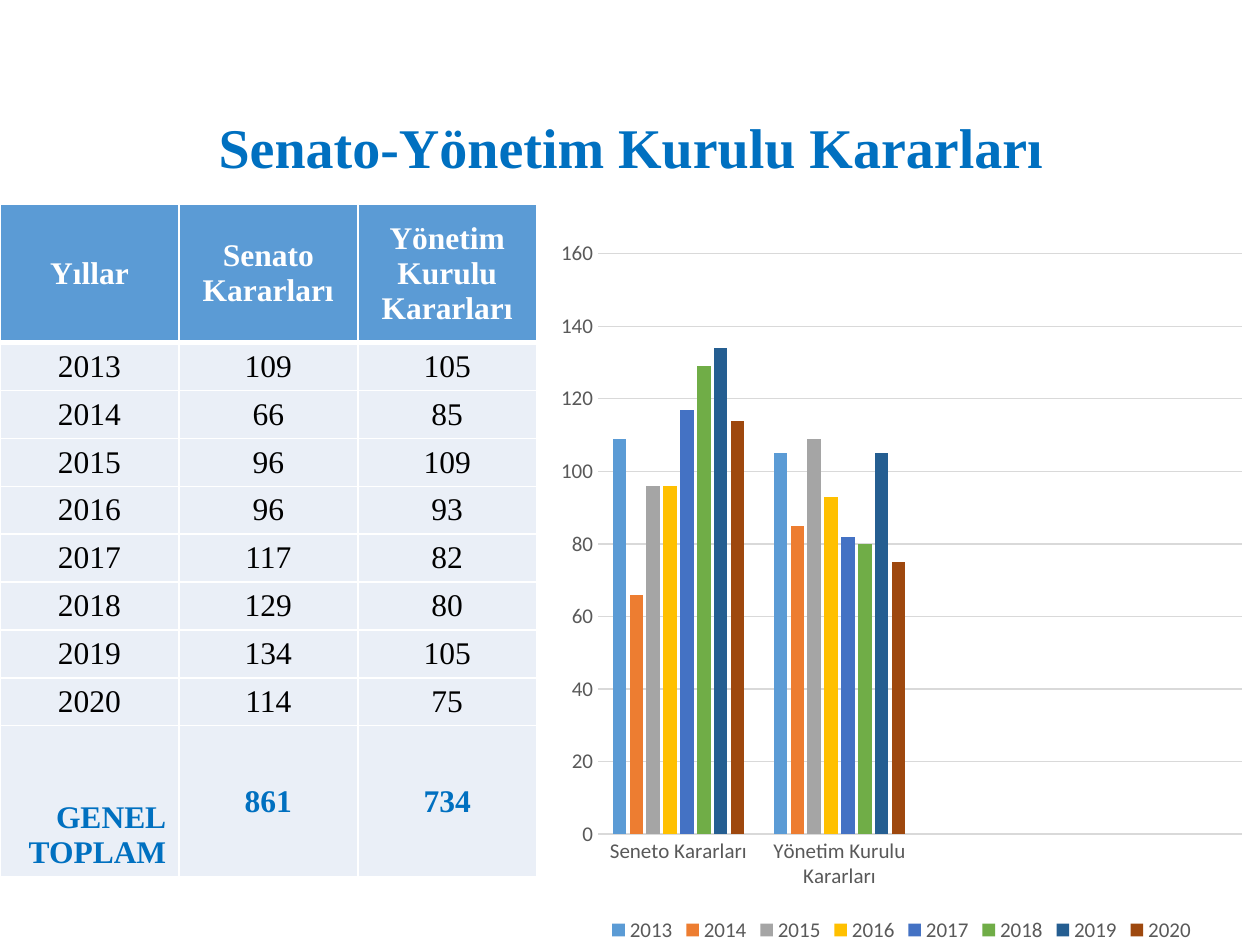
from lxml.etree import SubElement as Sub
from pptx import Presentation as Deck
from pptx.chart.data import CategoryChartData as Data
from pptx.dml.color import RGBColor as Rgb
from pptx.enum.chart import XL_CHART_TYPE as Kind, XL_LEGEND_POSITION as Spot, XL_TICK_MARK as Tick
from pptx.enum.text import MSO_ANCHOR as Anchor, MSO_AUTO_SIZE as Auto, PP_ALIGN as Align
from pptx.oxml.ns import qn
from pptx.util import Inches, Pt

TITLE = "Senato-Yönetim Kurulu Kararları"
HEAD = ("Yıllar", "Senato Kararları", "Yönetim Kurulu Kararları")
YEARS = [
    ("2013", 109, 105, "5B9BD5"),
    ("2014", 66, 85, "ED7D31"),
    ("2015", 96, 109, "A5A5A5"),
    ("2016", 96, 93, "FFC000"),
    ("2017", 117, 82, "4472C4"),
    ("2018", 129, 80, "70AD47"),
    ("2019", 134, 105, "255E91"),
    ("2020", 114, 75, "9E480E"),
]
TOTAL = ("GENEL\nTOPLAM", 861, 734)
GROUPS = ("Seneto Kararları", "Yönetim Kurulu Kararları", "", "")
SERIF, SANS = "Times New Roman", "Calibri"
BLUE, WHITE, BLACK, GREY, RULE = "0070C0", "FFFFFF", "000000", "595959", "D9D9D9"
HEADER, BODY = "5B9BD5", "EAEFF7"
COL, TALL, ROW, LAST = 1.42, 1.1, 0.38, 1.2


def paint(part, hue):
    part.fill.solid()
    part.fill.fore_color.rgb = Rgb.from_string(hue)


def style(font, size, hue, name, bold=False):
    for key, val in {"size": Pt(size), "name": name, "bold": bold}.items():
        setattr(font, key, val)
    font.color.rgb = Rgb.from_string(hue)


def rule(line, hue):
    line.color.rgb = Rgb.from_string(hue)
    line.width = Pt(0.75)


def write(frame, text, size, hue, bold, align):
    frame.text = text
    for par in frame.paragraphs:
        par.alignment = align
        for run in par.runs:
            style(run.font, size, hue, SERIF, bold)


def edge(cell, widths):
    props = cell._tc.get_or_add_tcPr()
    for spot, (side, width) in enumerate(zip("LRTB", widths)):
        line = Sub(props, qn(f"a:ln{side}"), w=str(Pt(width)))
        Sub(Sub(line, qn("a:solidFill")), qn("a:srgbClr"), val=WHITE)
        props.insert(spot, line)


def add_title(slide):
    title = slide.shapes.title
    place = {"left": 0.51, "top": 0.84, "width": 9, "height": 0.71}
    for key, val in place.items():
        setattr(title, key, Inches(val))
    frame = title.text_frame
    frame.auto_size = Auto.NONE
    frame.vertical_anchor = Anchor.MIDDLE
    write(frame, TITLE, 32, BLUE, True, Align.CENTER)
    frame.paragraphs[0].line_spacing = 0.9


def add_grid(slide):
    rows = [HEAD, *(year[:3] for year in YEARS), TOTAL]
    highs = [TALL] + [ROW] * len(YEARS) + [LAST]
    grid = slide.shapes.add_table(
        len(rows), len(HEAD), 0, Inches(1.62),
        Inches(COL * len(HEAD)), Inches(sum(highs))).table
    for col in grid.columns:
        col.width = Inches(COL)
    end = len(rows) - 1
    for r, (row, high) in enumerate(zip(rows, highs)):
        grid.rows[r].height = Inches(high)
        hue = {0: WHITE, end: BLUE}.get(r, BLACK)
        for c, val in enumerate(row):
            cell = grid.cell(r, c)
            label = r == end and c == 0
            align = Align.RIGHT if label else Align.CENTER
            write(cell.text_frame, str(val), 18, hue, r in (0, end), align)
            cell.vertical_anchor = Anchor.BOTTOM if label else Anchor.MIDDLE
            paint(cell, BODY if r else HEADER)
            edge(cell, (1, 1, 3 if r == 1 else 1, 1 if r else 3))


def add_bars(slide):
    data = Data()
    data.categories = GROUPS
    for name, senate, board, hue in YEARS:
        data.add_series(name, (senate, board, None, None))
    chart = slide.shapes.add_chart(
        Kind.COLUMN_CLUSTERED, Inches(4.34), Inches(1.8),
        Inches(5.63), Inches(5.72), data).chart
    style(chart.font, 10, BLACK, SANS)
    chart.has_title = False
    chart.has_legend = True
    chart.legend.position = Spot.BOTTOM
    chart.legend.include_in_layout = False
    style(chart.legend.font, 12, GREY, SANS)
    plot = chart.plots[0]
    for key, val in {"gap_width": 219, "overlap": -27, "vary_by_categories": False}.items():
        setattr(plot, key, val)
    for bars, year in zip(plot.series, YEARS):
        paint(bars.format, year[3])
        bars.invert_if_negative = False
    base, scale = chart.category_axis, chart.value_axis
    for axis in (base, scale):
        axis.major_tick_mark = axis.minor_tick_mark = Tick.NONE
        style(axis.tick_labels.font, 12, GREY, SANS)
    rule(base.format.line, RULE)
    for key, val in {"minimum_scale": 0, "maximum_scale": 160, "major_unit": 20}.items():
        setattr(scale, key, val)
    scale.format.line.fill.background()
    rule(scale.major_gridlines.format.line, RULE)


def main():
    deck = Deck()
    deck.slide_width, deck.slide_height = Inches(10), Inches(7.5)
    slide = deck.slides.add_slide(deck.slide_layouts[5])
    add_title(slide)
    add_grid(slide)
    add_bars(slide)
    deck.save("out.pptx")


if __name__ == "__main__":
    main()
